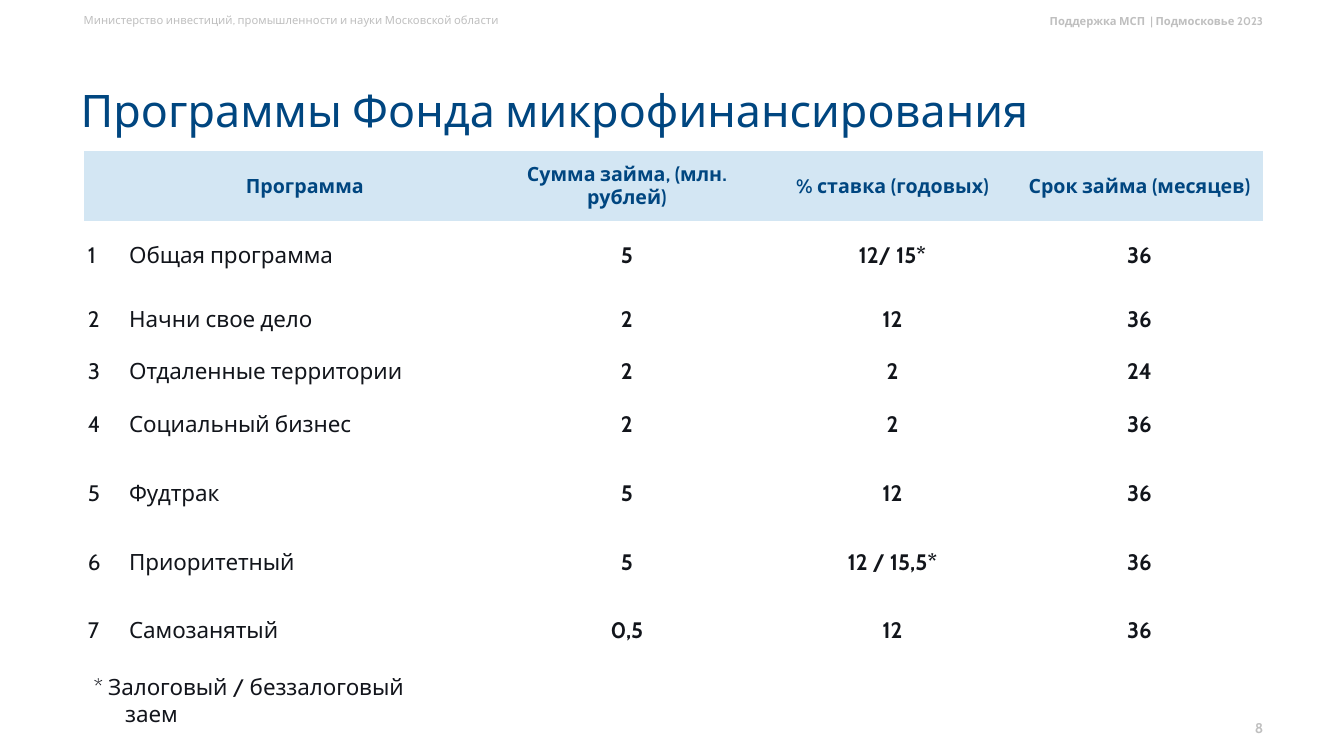
from pptx import Presentation
from pptx.dml.color import RGBColor
from pptx.enum.text import MSO_ANCHOR as Anchor, PP_ALIGN as Align
from pptx.oxml.ns import qn
from pptx.util import Pt

FONT = "Cabin"
COLORS = {"navy": "004680", "header": "D3E6F3", "ink": "12151B",
          "note": "13151C", "grey": "BFBFBF"}
NO_GRID_STYLE = "{2D5ABB26-0587-4C30-8999-92F81FD0307C}"

COLUMNS = [29.5, 257, 203, 176.4, 176.4]
ROWS = [49.7, 49.7, 41.8, 33.1, 41.8, 56.9, 41.8, 55.4]
HEADINGS = ["", "Программа", "Сумма займа, (млн. рублей)",
            "% ставка (годовых)", "Срок займа (месяцев)"]
PROGRAMS = [
    ("Общая программа", "5", "12/ 15*", "36"),
    ("Начни свое дело", "2", "12", "36"),
    ("Отдаленные территории", "2", "2", "24"),
    ("Социальный бизнес", "2", "2", "36"),
    ("Фудтрак", "5", "12", "36"),
    ("Приоритетный", "5", "12 / 15,5*", "36"),
    ("Самозанятый", "0,5", "12", "36"),
]


def color(name):
    return RGBColor.from_string(COLORS[name])


def write(frame, text, size, ink, bold=False, align=Align.LEFT):
    paragraph = frame.paragraphs[0]
    paragraph.alignment = align
    run = paragraph.add_run()
    run.text = text
    for attribute, value in {"name": FONT, "size": Pt(size), "bold": bold}.items():
        setattr(run.font, attribute, value)
    run.font.color.rgb = color(ink)
    return paragraph


def add_label(slide, box, text, size, ink, bold=False, align=Align.LEFT,
              anchor=Anchor.MIDDLE):
    frame = slide.shapes.add_textbox(*map(Pt, box)).text_frame
    frame.word_wrap = True
    frame.vertical_anchor = anchor
    return write(frame, text, size, ink, bold, align)


def add_running_heads(slide, left, top, width):
    # Ministry on the left, programme on the right
    add_label(slide, (left, top, 406.8, 17.3),
              "Министерство инвестиций, промышленности и науки Московской области",
              8, "grey", anchor=Anchor.TOP)
    add_label(slide, (left + width - 324, top + 2.9, 324, 13),
              "Поддержка МСП  | Подмосковье 2023", 8, "grey", True, Align.RIGHT)


def add_title(slide, left, top, width, height):
    title = slide.shapes.title
    place = {"left": left, "top": top, "width": width, "height": height}
    for attribute, value in place.items():
        setattr(title, attribute, Pt(value))
    title.text_frame.vertical_anchor = Anchor.MIDDLE
    heading = write(title.text_frame, "Программы Фонда микрофинансирования", 32, "navy")
    heading.line_spacing = 0.9


def add_programs(slide, left, top):
    grid = [HEADINGS] + [(str(number), *program)
                         for number, program in enumerate(PROGRAMS, 1)]
    table = slide.shapes.add_table(
        len(ROWS), len(COLUMNS), Pt(left), Pt(top),
        Pt(sum(COLUMNS)), Pt(sum(ROWS))).table
    table.horz_banding = False
    table._tbl.tblPr.find(qn("a:tableStyleId")).text = NO_GRID_STYLE
    for column, width in zip(table.columns, COLUMNS):
        column.width = Pt(width)
    for row, height in zip(table.rows, ROWS):
        row.height = Pt(height)

    cell_format = {"vertical_anchor": Anchor.MIDDLE, "margin_left": Pt(2.9),
                   "margin_right": Pt(2.9), "margin_top": 0, "margin_bottom": 0}
    for r, texts in enumerate(grid):
        for c, text in enumerate(texts):
            cell = table.cell(r, c)
            for attribute, value in cell_format.items():
                setattr(cell, attribute, value)
            is_header, is_figure = r == 0, c > 1
            if is_header:
                cell.fill.solid()
                cell.fill.fore_color.rgb = color("header")
            else:
                cell.fill.background()
            if text:
                write(cell.text_frame, text, 14 if is_header else 16,
                      "navy" if is_header else "ink", is_header or is_figure,
                      Align.CENTER if is_header or is_figure else Align.LEFT)


def add_footnote(slide, left, top, width, height):
    footnote = add_label(slide, (left, top, width, height),
                         "* Залоговый / беззалоговый заем", 16, "note",
                         anchor=Anchor.TOP)
    # Hanging indent
    properties = footnote._p.get_or_add_pPr()
    properties.set("marL", str(Pt(22.5)))
    properties.set("indent", str(-Pt(22.5)))


def main():
    deck = Presentation()
    deck.slide_width, deck.slide_height = Pt(960), Pt(540)
    slide = deck.slides.add_slide(deck.slide_layouts[5])
    add_running_heads(slide, 52.6, 5.8, 856.8)
    add_title(slide, 50.4, 28.8, 859.7, 104.4)
    add_programs(slide, 59.8, 108)
    add_footnote(slide, 59.8, 477.4, 262.8, 26.6)
    # Page number
    add_label(slide, (693.4, 511.2, 216, 18), "8", 10, "grey", True, Align.RIGHT)
    deck.save("out.pptx")


if __name__ == "__main__":
    main()
